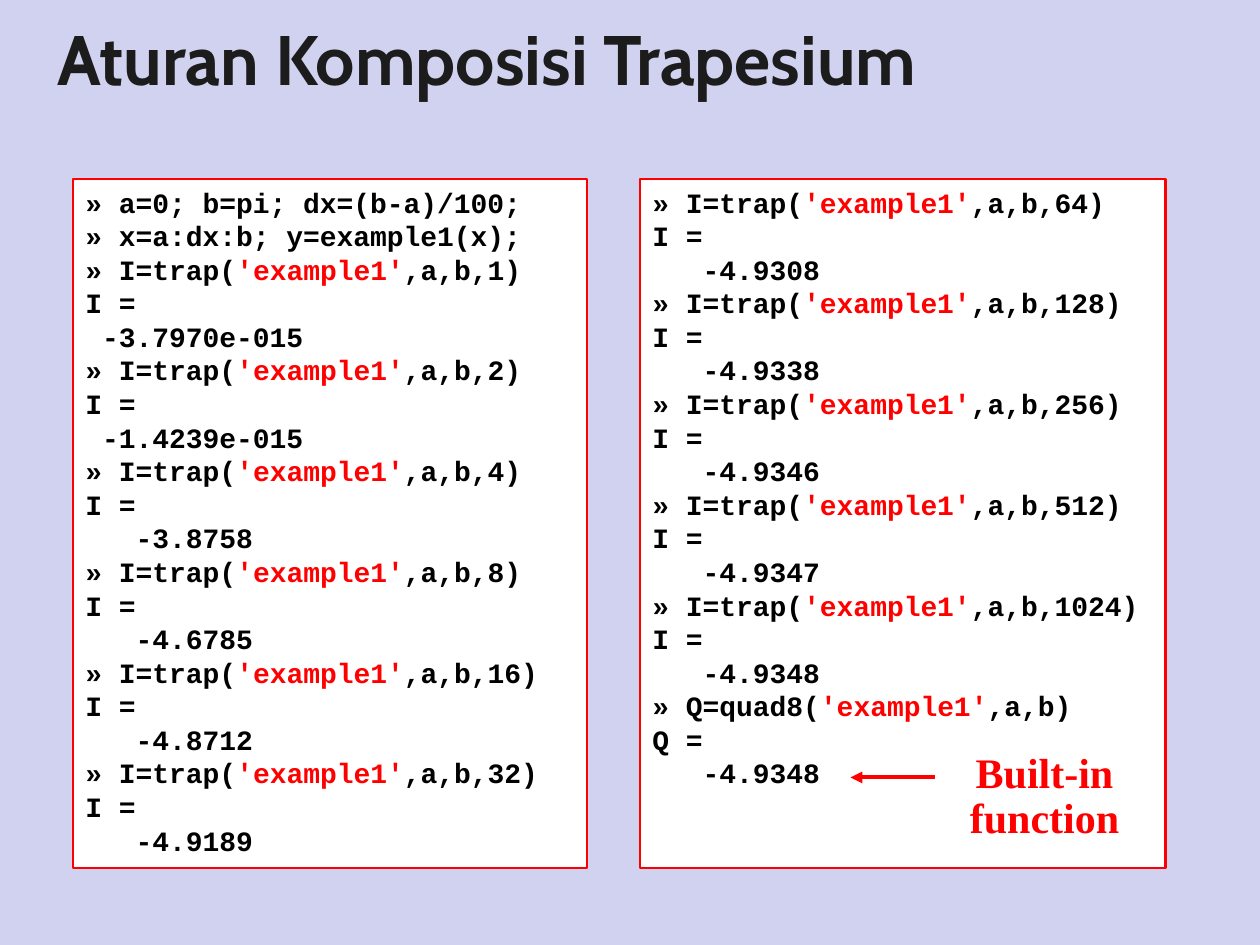
import pptx
import pptx.util
import pptx.dml.color
import pptx.enum.shapes
import pptx.enum.text
import pptx.oxml
import pptx.oxml.ns
from pptx.util import Inches

COLOURS = {"page": "D1D1F0", "panel": "FFFFFF", "accent": "FF0000",
           "code": "000000", "title": "1C1C1C"}


def colour(name):
    return pptx.dml.color.RGBColor.from_string(COLOURS[name])


def add_span(para, text, font, size, ink):
    span = para.add_run()
    span.text = text
    span.font.name = font
    span.font.size = pptx.util.Pt(size)
    span.font.bold = True
    span.font.color.rgb = colour(ink)


deck = pptx.Presentation()
deck.slide_width = Inches(10)
deck.slide_height = Inches(7.5)
page = deck.slides.add_slide(deck.slide_layouts[6])
page.background.fill.solid()
page.background.fill.fore_color.rgb = colour("page")

left_lines = ["» a=0; b=pi; dx=(b-a)/100;", "» x=a:dx:b; y=example1(x);"]
right_lines = []
for lines, results in [
    (left_lines, [(1, " -3.7970e-015"), (2, " -1.4239e-015"), (4, "   -3.8758"),
                  (8, "   -4.6785"), (16, "   -4.8712"), (32, "   -4.9189")]),
    (right_lines, [(64, "   -4.9308"), (128, "   -4.9338"), (256, "   -4.9346"),
                   (512, "   -4.9347"), (1024, "   -4.9348")]),
]:
    for intervals, value in results:
        lines += [f"» I=trap('example1',a,b,{intervals})", "I =", value]
right_lines += ["» Q=quad8('example1',a,b)", "Q =", "   -4.9348"]

for left, width, lines in [(0.58, 4.08, left_lines), (5.08, 4.17, right_lines)]:
    panel = page.shapes.add_shape(pptx.enum.shapes.MSO_SHAPE.RECTANGLE,
                                  Inches(left), Inches(1.42), Inches(width), Inches(5.47))
    panel.shadow.inherit = False
    panel.fill.solid()
    panel.fill.fore_color.rgb = colour("panel")
    panel.line.color.rgb = colour("accent")
    panel.line.width = pptx.util.Pt(1.5)
    frame = panel.text_frame
    frame.word_wrap = True
    frame.vertical_anchor = pptx.enum.text.MSO_ANCHOR.TOP
    for index, line in enumerate(lines):
        para = frame.add_paragraph() if index else frame.paragraphs[0]
        para.alignment = pptx.enum.text.PP_ALIGN.LEFT
        before, quoted, after = line.partition("'example1'")
        for text, ink in [(before, "code"), (quoted, "accent"), (after, "code")]:
            if text:
                add_span(para, text, "Courier New", 16, ink)

label = page.shapes.add_textbox(Inches(7.33), Inches(5.92), Inches(1.92), Inches(0.82))
label.text_frame.word_wrap = True
para = label.text_frame.paragraphs[0]
para.alignment = pptx.enum.text.PP_ALIGN.CENTER
para.line_spacing = 0.9
add_span(para, "Built-in function", "Times New Roman", 24, "accent")

arrow = page.shapes.add_connector(pptx.enum.shapes.MSO_CONNECTOR.STRAIGHT,
                                  Inches(7.42), Inches(6.17), Inches(6.75), Inches(6.17))
arrow.line.color.rgb = colour("accent")
arrow.line.width = pptx.util.Pt(2.25)
head = pptx.oxml.parse_xml(f'<a:tailEnd {pptx.oxml.ns.nsdecls("a")} type="triangle"/>')
arrow.line._get_or_add_ln().append(head)
effects = pptx.oxml.parse_xml(f'<a:effectLst {pptx.oxml.ns.nsdecls("a")}/>')
arrow._element.spPr.append(effects)

title = page.shapes.add_textbox(Inches(0.36), Inches(0.25), Inches(8.5), Inches(0.58))
title.text_frame.word_wrap = True
title.text_frame.vertical_anchor = pptx.enum.text.MSO_ANCHOR.MIDDLE
para = title.text_frame.paragraphs[0]
para.line_spacing = 0.7
add_span(para, "Aturan Komposisi Trapesium", "Cabin", 40, "title")

deck.save("out.pptx")
